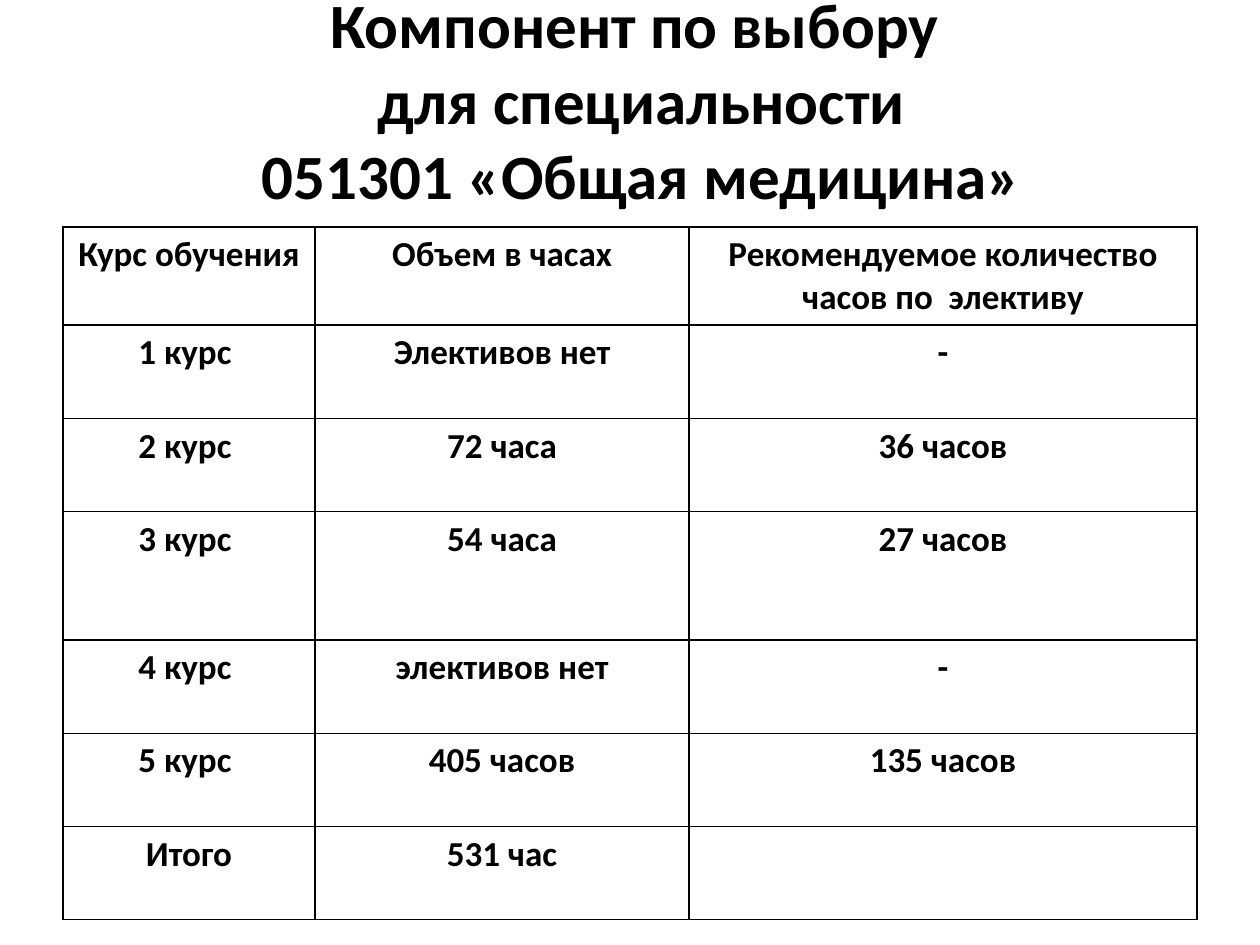
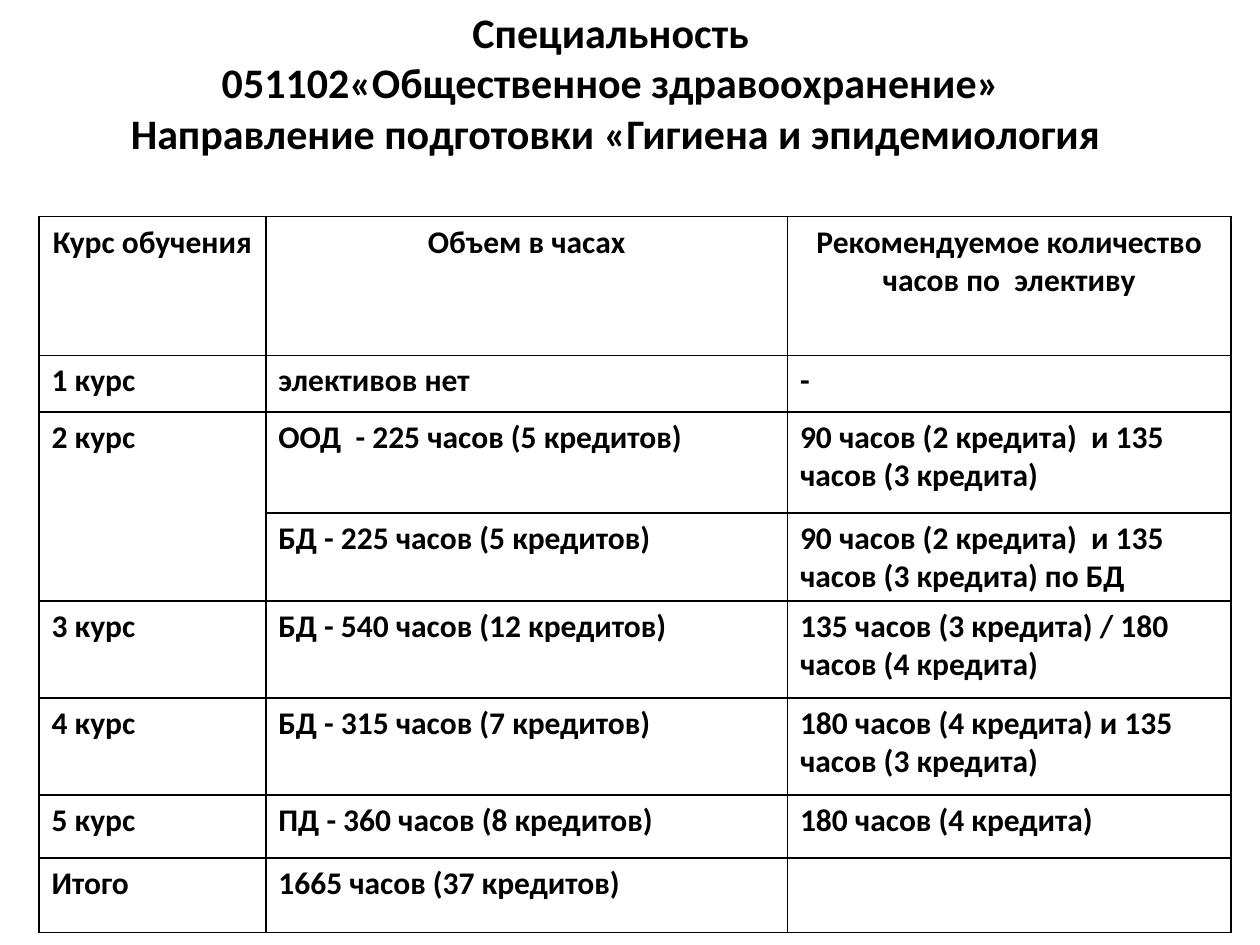
"""Build two slides of elective hours, each a centred title above a bordered table."""
from dataclasses import dataclass

import lxml.etree
import pptx
import pptx.dml.color
import pptx.enum.text
import pptx.oxml.ns
import pptx.slide
import pptx.text.text
import pptx.util

SCALE = 9144
FONT = "Calibri"
BLACK = pptx.dml.color.RGBColor(0, 0, 0)
WHITE = pptx.dml.color.RGBColor(255, 255, 255)
CENTER = pptx.enum.text.PP_ALIGN.CENTER
LEFT = pptx.enum.text.PP_ALIGN.LEFT
TOP = pptx.enum.text.MSO_ANCHOR.TOP
MIDDLE = pptx.enum.text.MSO_ANCHOR.MIDDLE
HEADER = ("Курс обучения", "Объем в часах", "Рекомендуемое количество часов по  элективу")


@dataclass(frozen=True)
class Title:
    lines: tuple[str, ...]
    box: tuple[int, int, int, int]
    size: int
    anchor: pptx.enum.text.MSO_ANCHOR


@dataclass(frozen=True)
class Grid:
    left: int
    top: int
    widths: tuple[int, ...]
    heights: tuple[int, ...]
    size: int
    align: pptx.enum.text.PP_ALIGN
    rows: tuple[tuple[str, str, str], ...]
    merges: tuple[tuple[int, int, int, int], ...] = ()


PAGES = (
    (
        Title(("Компонент по выбору\n для специальности\n 051301 «Общая медицина»",),
              (31, 16, 945, 125), 36, MIDDLE),
        Grid(50, 180, (200, 297, 403), (78, 74, 74, 102, 74, 74, 74), 20, CENTER, (
            ("1 курс ", "Элективов нет", "-"),
            ("2 курс ", "72 часа", "36 часов"),
            ("3 курс ", "54 часа", "27 часов"),
            ("4 курс ", "элективов нет", "-"),
            ("5 курс ", "405 часов", "135 часов"),
            ("Итого", "531 час", ""),
        )),
    ),
    (
        Title(("Специальность ", "051102«Общественное здравоохранение» ",
               "Направление подготовки «Гигиена и эпидемиология"),
              (0, 0, 977, 131), 24, TOP),
        Grid(31, 172, (180, 414, 352), (110, 45, 80, 70, 77, 77, 50, 59), 18, LEFT, (
            ("1 курс", "элективов нет", "-"),
            ("2 курс", "ООД  - 225 часов (5 кредитов)",
             "90 часов (2 кредита)  и 135 часов (3 кредита)"),
            ("", "БД - 225 часов (5 кредитов)",
             "90 часов (2 кредита)  и 135 часов (3 кредита) по БД"),
            ("3 курс", "БД - 540 часов (12 кредитов)",
             "135 часов (3 кредита) / 180 часов (4 кредита)"),
            ("4 курс", "БД - 315 часов (7 кредитов)",
             "180 часов (4 кредита) и 135 часов (3 кредита)"),
            ("5 курс", "ПД - 360 часов (8 кредитов)", "180 часов (4 кредита)"),
            ("Итого", "1665 часов (37 кредитов)", ""),
        ), ((2, 0, 3, 0),)),
    ),
)


def px(count: int) -> pptx.util.Emu:
    return pptx.util.Emu(count * SCALE)


def write(para: pptx.text.text._Paragraph, text: str, size: int,
          align: pptx.enum.text.PP_ALIGN) -> None:
    para.text = text
    para.alignment = align
    font = para.font
    font.name, font.size, font.bold = FONT, pptx.util.Pt(size), True
    font.color.rgb = BLACK


def border(cell: pptx.table._Cell) -> None:
    tag = pptx.oxml.ns.qn
    props = cell._tc.get_or_add_tcPr()
    for side in "LRTB":
        line = lxml.etree.SubElement(props, tag(f"a:ln{side}"), w=str(pptx.util.Pt(1)))
        fill = lxml.etree.SubElement(line, tag("a:solidFill"))
        lxml.etree.SubElement(fill, tag("a:srgbClr"), val=str(BLACK))


def draw_title(slide: pptx.slide.Slide, title: Title) -> None:
    frame = slide.shapes.add_textbox(*map(px, title.box)).text_frame
    frame.word_wrap = True
    frame.vertical_anchor = title.anchor
    for index, line in enumerate(title.lines):
        para = frame.add_paragraph() if index else frame.paragraphs[0]
        write(para, line, title.size, CENTER)


def draw_grid(slide: pptx.slide.Slide, grid: Grid) -> None:
    rows = (HEADER, *grid.rows)
    box = (grid.left, grid.top, sum(grid.widths), sum(grid.heights))
    table = slide.shapes.add_table(len(rows), len(HEADER), *map(px, box)).table
    table.first_row = table.horz_banding = False
    for column, width in zip(table.columns, grid.widths):
        column.width = px(width)
    for index, (row, height, texts) in enumerate(zip(table.rows, grid.heights, rows)):
        row.height = px(height)
        for cell, text in zip(row.cells, texts):
            write(cell.text_frame.paragraphs[0], text, grid.size,
                  grid.align if index else CENTER)
            border(cell)
            cell.fill.solid()
            cell.fill.fore_color.rgb = WHITE
    for top, left, bottom, right in grid.merges:
        table.cell(top, left).merge(table.cell(bottom, right))


def main() -> None:
    deck = pptx.Presentation()
    deck.slide_width, deck.slide_height = px(1000), px(750)
    for title, grid in PAGES:
        slide = deck.slides.add_slide(deck.slide_layouts[6])
        draw_grid(slide, grid)
        draw_title(slide, title)
    deck.save("out.pptx")


if __name__ == "__main__":
    main()
